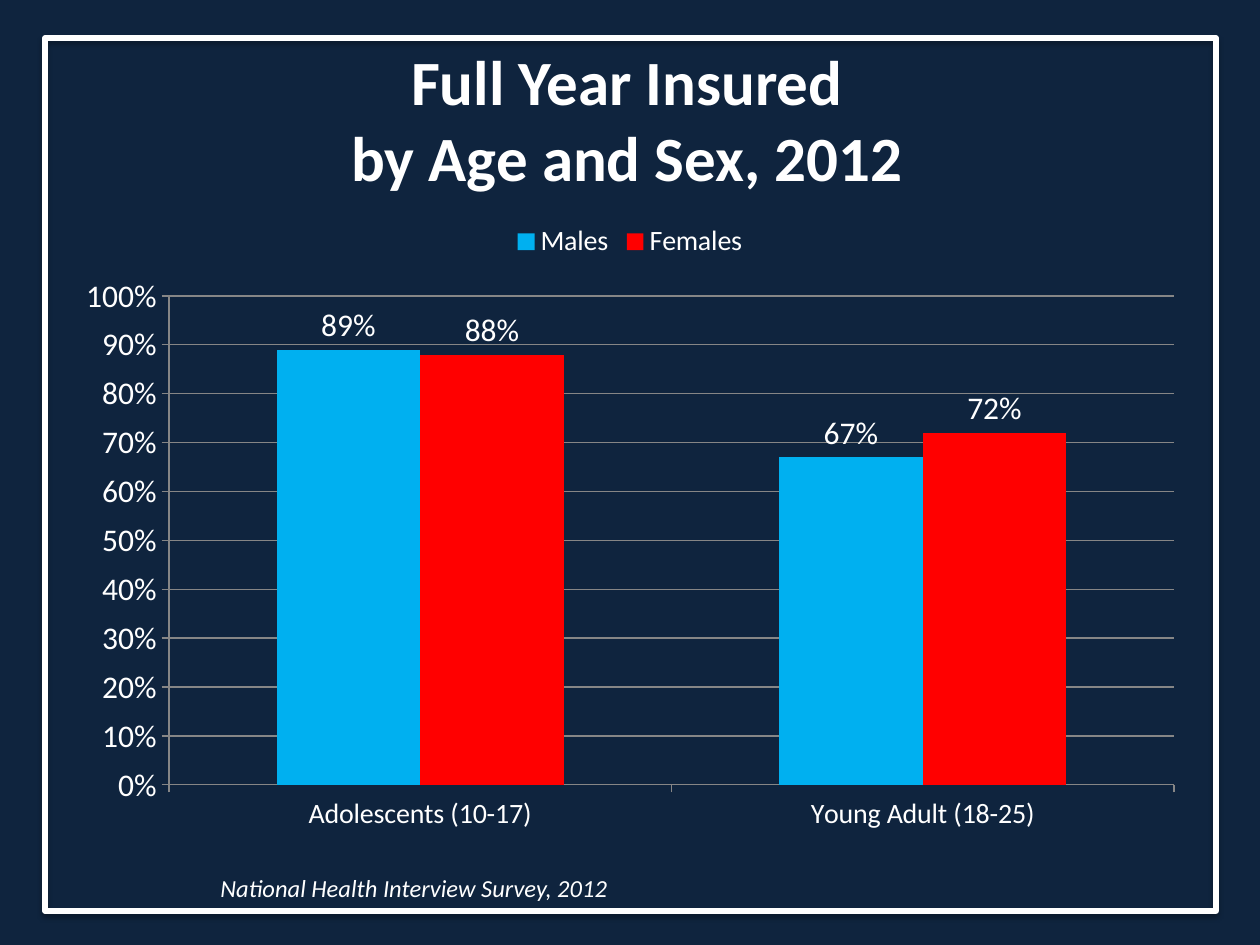
"""Build a slide with a column chart of full-year insurance by age and sex."""
import lxml.etree
import pptx
import pptx.chart.data
import pptx.dml.color
import pptx.enum.chart
import pptx.enum.shapes
import pptx.enum.text
import pptx.oxml
import pptx.oxml.ns
import pptx.util

PX = 914400 / 126
FONT = "Calibri"
WHITE = "FFFFFF"
GRID = "868686"


def color(value):
    return pptx.dml.color.RGBColor.from_string(value)


def px(*lengths):
    return [pptx.util.Emu(round(length * PX)) for length in lengths]


presentation = pptx.Presentation()
presentation.slide_width, presentation.slide_height = px(1260, 945)
slide = presentation.slides.add_slide(presentation.slide_layouts[6])

background = slide.background.fill
background.gradient()
background.gradient_angle = 90
for stop, (position, value) in zip(background.gradient_stops, [(0, "0F243E"), (0.19, "102640")]):
    stop.position = position
    stop.color.rgb = color(value)

frame = slide.shapes.add_shape(pptx.enum.shapes.MSO_SHAPE.RECTANGLE, *px(45, 38, 1171, 873))
frame.shadow.inherit = False
frame.fill.background()
frame.line.color.rgb = color(WHITE)
frame.line.width = pptx.util.Pt(3)
effects = frame._element.spPr.find(pptx.oxml.ns.qn("a:effectLst"))
effects.append(pptx.oxml.parse_xml(
    f'<a:outerShdw {pptx.oxml.ns.nsdecls("a")} blurRad="39370" dist="22860" dir="5400000" rotWithShape="0">'
    '<a:srgbClr val="000000"><a:alpha val="35000"/></a:srgbClr></a:outerShdw>'))

texts = [
    ((107, 58, 1040, 120), ["Full Year Insured", "by Age and Sex, 2012"], 36, True, False,
     pptx.enum.text.PP_ALIGN.CENTER, pptx.enum.text.MSO_ANCHOR.MIDDLE),
    ((208, 867, 733, 43), ["National Health Interview Survey, 2012"], 14, False, True,
     pptx.enum.text.PP_ALIGN.LEFT, pptx.enum.text.MSO_ANCHOR.TOP),
]
for box, lines, size, bold, italic, alignment, anchor in texts:
    text_frame = slide.shapes.add_textbox(*px(*box)).text_frame
    text_frame.word_wrap = True
    text_frame.vertical_anchor = anchor
    paragraph = text_frame.paragraphs[0]
    paragraph.alignment = alignment
    for index, line in enumerate(lines):
        if index:
            paragraph.add_line_break()
        run = paragraph.add_run()
        run.text = line
        run.font.name = FONT
        run.font.size = pptx.util.Pt(size)
        run.font.bold = bold
        run.font.italic = italic
        run.font.color.rgb = color(WHITE)

series_data = [("Males", (0.89, 0.67), "00B0F0"), ("Females", (0.88, 0.72), "FF0000")]
chart_data = pptx.chart.data.CategoryChartData(number_format="0%")
chart_data.categories = ["Adolescents (10-17)", "Young Adult (18-25)"]
for name, values, _ in series_data:
    chart_data.add_series(name, values)
chart = slide.shapes.add_chart(
    pptx.enum.chart.XL_CHART_TYPE.COLUMN_CLUSTERED, *px(63, 210, 1134, 634), chart_data).chart
chart.has_title = False
chart.font.name = FONT
chart.font.size = pptx.util.Pt(18)
chart.font.color.rgb = color(WHITE)

chart.has_legend = True
chart.legend.position = pptx.enum.chart.XL_LEGEND_POSITION.TOP
chart.legend.include_in_layout = False
chart.category_axis.tick_labels.font.size = pptx.util.Pt(16)
chart.legend.font.size = pptx.util.Pt(16)
for font in (chart.category_axis.tick_labels.font, chart.legend.font):
    font.name = FONT
    font.color.rgb = color(WHITE)

value_axis = chart.value_axis
value_axis.minimum_scale, value_axis.maximum_scale, value_axis.major_unit = 0, 1, 0.1
value_axis.tick_labels.number_format = "0%"
value_axis.tick_labels.number_format_is_linked = False
value_axis.has_major_gridlines = True
for line in (value_axis.major_gridlines.format.line, value_axis.format.line,
             chart.category_axis.format.line):
    line.color.rgb = color(GRID)
    line.width = pptx.util.Pt(0.75)
for axis in (value_axis, chart.category_axis):
    axis.major_tick_mark = pptx.enum.chart.XL_TICK_MARK.OUTSIDE

plot = chart.plots[0]
plot.gap_width = 150
plot.overlap = 0
plot.vary_by_categories = False
for series, (_, _, fill) in zip(plot.series, series_data):
    series.format.fill.solid()
    series.format.fill.fore_color.rgb = color(fill)
    labels = series.data_labels
    labels.show_value = True
    labels.number_format = "0%"
    labels.number_format_is_linked = False
    labels.position = pptx.enum.chart.XL_LABEL_POSITION.OUTSIDE_END

plot_area = chart._chartSpace.chart.plotArea
for old_layout in plot_area.findall(pptx.oxml.ns.qn("c:layout")):
    plot_area.remove(old_layout)
layout = lxml.etree.Element(pptx.oxml.ns.qn("c:layout"))
manual = lxml.etree.SubElement(layout, pptx.oxml.ns.qn("c:manualLayout"))
for tag, value in [("layoutTarget", "inner"), ("xMode", "edge"), ("yMode", "edge"),
                   ("x", 106 / 1134), ("y", 86 / 634), ("w", 1005 / 1134), ("h", 489 / 634)]:
    lxml.etree.SubElement(manual, pptx.oxml.ns.qn(f"c:{tag}")).set("val", str(value))
plot_area.insert(0, layout)

presentation.save("out.pptx")
